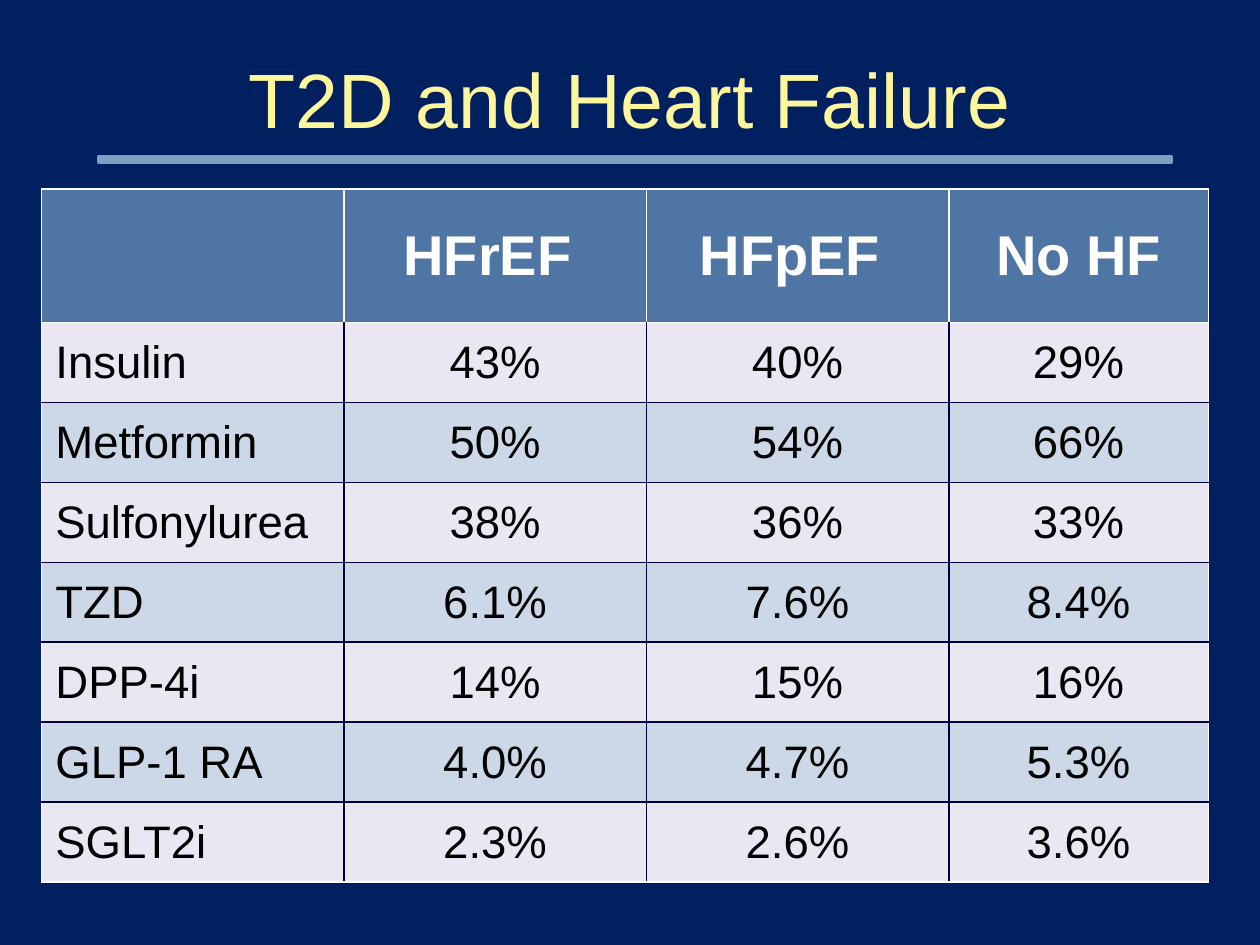
from pptx import Presentation
from pptx.dml.color import RGBColor
from pptx.enum.shapes import MSO_SHAPE as Shape
from pptx.enum.text import MSO_ANCHOR as Anchor, PP_ALIGN as Align
from pptx.oxml import parse_xml
from pptx.oxml.ns import nsdecls
from pptx.util import Inches, Pt

COLORS = {
    "background": "002060", "title": "FDF69C", "bar": "809EC2",
    "header": "4E75A3", "odd": "EBE7F2", "even": "CCD8E7",
    "white": "FFFFFF", "grid": "00003E", "text": "000000",
}
ROWS = [
    ("", "HFrEF", "HFpEF", "No HF"),
    ("Insulin", "43%", "40%", "29%"),
    ("Metformin", "50%", "54%", "66%"),
    ("Sulfonylurea", "38%", "36%", "33%"),
    ("TZD", "6.1%", "7.6%", "8.4%"),
    ("DPP-4i", "14%", "15%", "16%"),
    ("GLP-1 RA", "4.0%", "4.7%", "5.3%"),
    ("SGLT2i", "2.3%", "2.6%", "3.6%"),
]
COLUMN_WIDTHS = (2.4, 2.4, 2.4, 2.06)
HEADER_HEIGHT = 1.06
TABLE_HEIGHT = 5.5


def rgb(name):
    return RGBColor.from_string(COLORS[name])


def write(frame, text, size=26, color="text", bold=False, align=Align.CENTER):
    para = frame.paragraphs[0]
    para.alignment = align
    span = para.add_run()
    span.text = text
    span.font.name = "Arial"
    span.font.size = Pt(size)
    span.font.bold = bold
    span.font.color.rgb = rgb(color)


class SlideBuilder:
    def __init__(self, page):
        self.page = page
        page.background.fill.solid()
        page.background.fill.fore_color.rgb = rgb("background")

    def title(self, text, left, top, width, height):
        box = self.page.shapes.title
        box.left, box.top = Inches(left), Inches(top)
        box.width, box.height = Inches(width), Inches(height)
        box.text_frame.vertical_anchor = Anchor.MIDDLE
        write(box.text_frame, text, size=44, color="title")

    def bar(self, left, top, width, height):
        bar = self.page.shapes.add_shape(
            Shape.MATH_MINUS, Inches(left), Inches(top), Inches(width), Inches(height))
        bar.shadow.inherit = False
        bar.fill.solid()
        bar.fill.fore_color.rgb = bar.line.color.rgb = rgb("bar")
        bar.line.width = Pt(2)

    def borders(self, cell, row, column):
        header = row == 0
        white_sides = {
            "L": header or column == 0,
            "R": header or column == len(COLUMN_WIDTHS) - 1,
            "T": row <= 1,
            "B": header or row == len(ROWS) - 1,
        }
        properties = cell._tc.get_or_add_tcPr()
        for side, white in white_sides.items():
            color = COLORS["white" if white else "grid"]
            properties.append(parse_xml(
                f'<a:ln{side} {nsdecls("a")} w="{Pt(1)}"><a:solidFill>'
                f'<a:srgbClr val="{color}"/></a:solidFill></a:ln{side}>'))

    def cell(self, cell, text, row, column):
        header = row == 0
        self.borders(cell, row, column)
        cell.fill.solid()
        cell.fill.fore_color.rgb = rgb("header" if header else "odd" if row % 2 else "even")
        cell.vertical_anchor = Anchor.MIDDLE
        # Labels are indented; the first two headings sit left of centre
        cell.margin_left = Inches(0.11 if column == 0 else 0.01)
        cell.margin_right = Inches(0.13 if header and column in (1, 2) else 0.01)
        cell.margin_top, cell.margin_bottom = Inches(0.01), 0
        if text:
            write(cell.text_frame, text, size=32 if header else 26, bold=header,
                  color="white" if header else "text",
                  align=Align.LEFT if column == 0 else Align.CENTER)

    def table(self, left, top):
        table = self.page.shapes.add_table(
            len(ROWS), len(COLUMN_WIDTHS), Inches(left), Inches(top),
            Inches(sum(COLUMN_WIDTHS)), Inches(TABLE_HEIGHT)).table
        table.horz_banding = False
        for column, width in enumerate(COLUMN_WIDTHS):
            table.columns[column].width = Inches(width)
        body_height = (TABLE_HEIGHT - HEADER_HEIGHT) / (len(ROWS) - 1)
        for row, texts in enumerate(ROWS):
            table.rows[row].height = Inches(body_height if row else HEADER_HEIGHT)
            for column, text in enumerate(texts):
                self.cell(table.cell(row, column), text, row, column)


def main():
    deck = Presentation()
    deck.slide_width, deck.slide_height = Inches(10), Inches(7.5)
    builder = SlideBuilder(deck.slides.add_slide(deck.slide_layouts[5]))

    # Heading and rule
    builder.title("T2D and Heart Failure", 0.5, 0.3, 9, 0.95)
    builder.bar(-0.75, 1.17, 11.58, 0.19)

    # Drug use by heart failure type
    builder.table(0.33, 1.5)

    deck.save("out.pptx")


if __name__ == "__main__":
    main()
